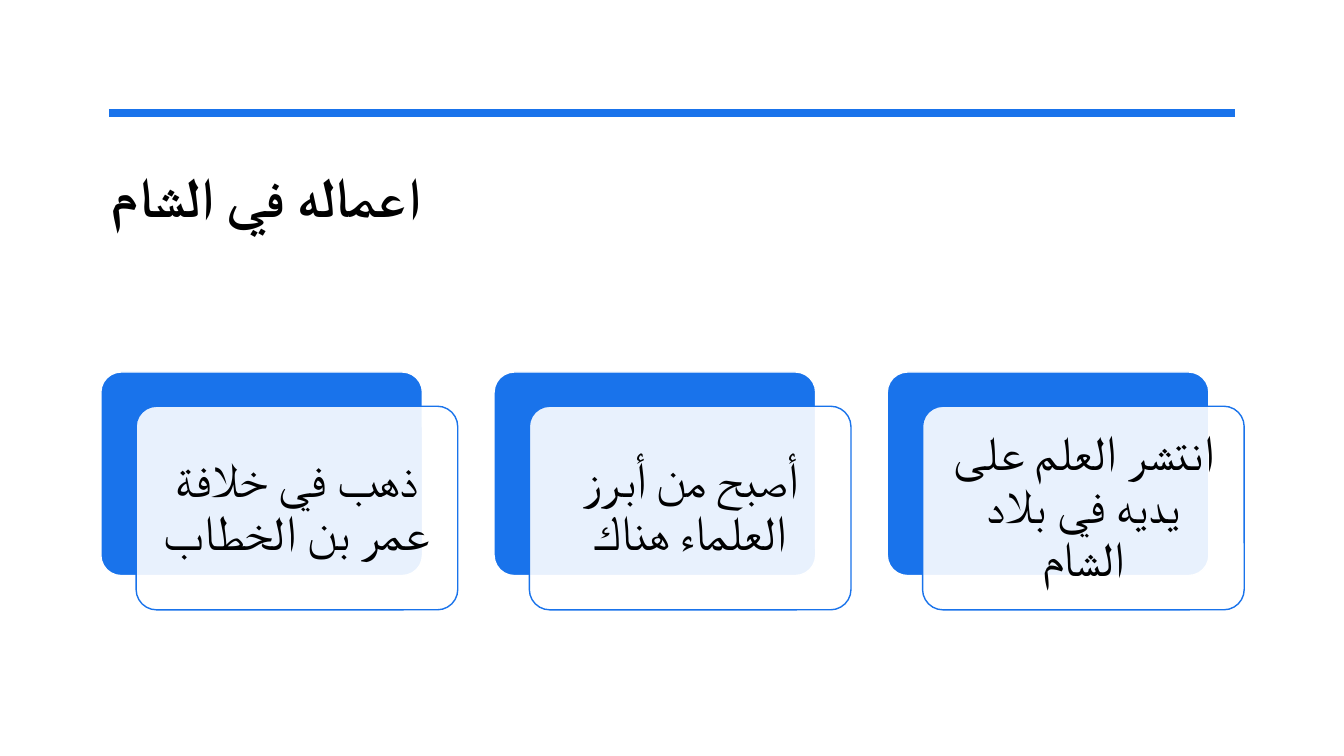
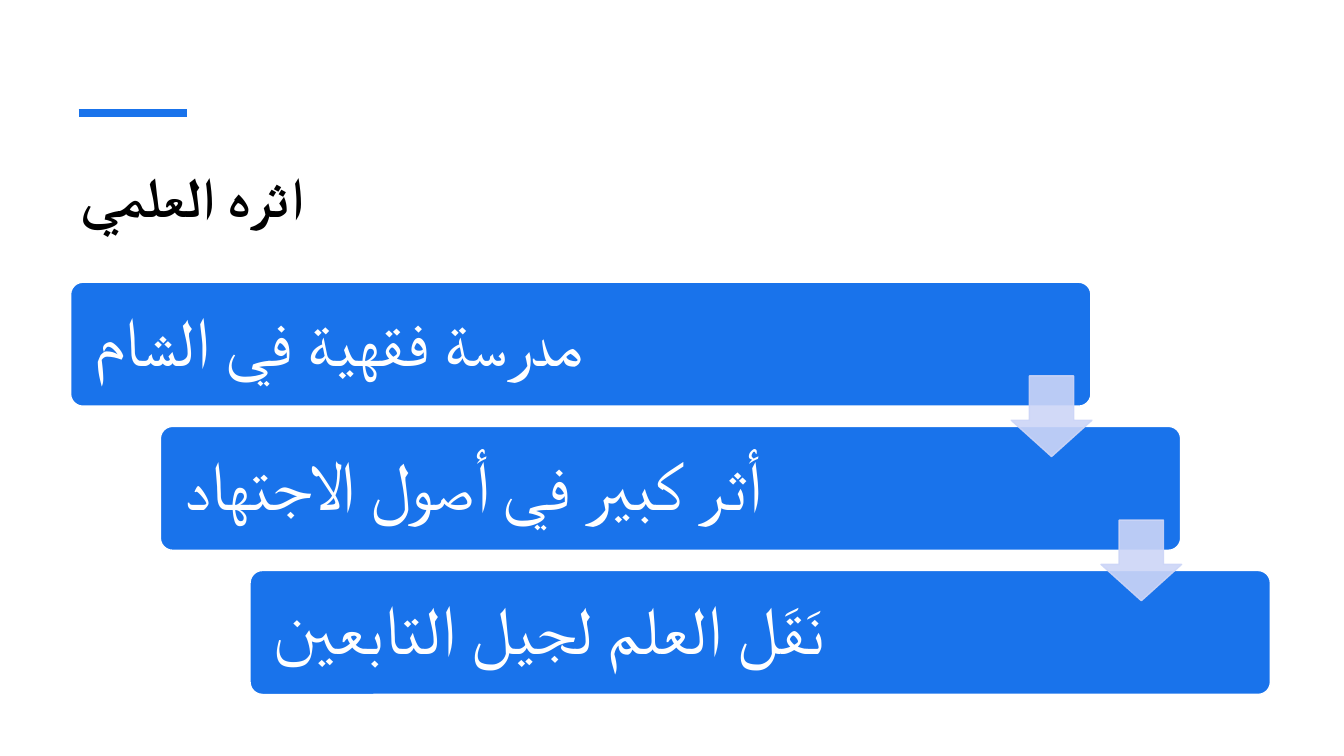
from lxml.etree import SubElement
from pptx import Presentation
from pptx.dml.color import RGBColor
from pptx.enum.shapes import MSO_CONNECTOR, MSO_SHAPE
from pptx.enum.text import MSO_ANCHOR, PP_ALIGN
from pptx.oxml.ns import qn
from pptx.util import Inches, Pt

BLUE = RGBColor(0x19, 0x73, 0xEB)
PALE_BLUE = RGBColor(0xCC, 0xD5, 0xF7)
WHITE = RGBColor(0xFF, 0xFF, 0xFF)
BLACK = RGBColor(0x00, 0x00, 0x00)
FONT = "Calibri"
TITLE_FORMAT = {"size": Pt(40), "bold": True}
CARD_FORMAT = {"size": Pt(35)}
BAR_FORMAT = {"size": Pt(49)}
CARDS = [
    "ذهب في خلافة عمر بن الخطاب",
    "أصبح من أبرز العلماء هناك",
    "انتشر العلم على يديه في بلاد الشام",
]
BARS = [
    "مدرسة فقهية في الشام",
    "أثر كبير في أصول الاجتهاد",
    "نَقَل العلم لجيل التابعين",
]


def set_opacity(color_format, percent):
    """Make a solid fill partly transparent."""
    color = color_format._xPr.find(qn("a:solidFill"))[0]
    SubElement(color, qn("a:alpha"), val=str(percent * 1000))


def write_text(shape, text, color, font_format, inset=0.1,
               alignment=PP_ALIGN.LEFT, anchor=MSO_ANCHOR.MIDDLE, spacing=0.9):
    """Write one formatted paragraph into a shape."""
    frame = shape.text_frame
    frame_format = {"word_wrap": True, "vertical_anchor": anchor}
    for side in ("left", "top", "right", "bottom"):
        frame_format[f"margin_{side}"] = Inches(inset)
    for name, value in frame_format.items():
        setattr(frame, name, value)
    paragraph = frame.paragraphs[0]
    paragraph.alignment = alignment
    paragraph.line_spacing = spacing
    run = paragraph.add_run()
    run.text = text
    run.font.color.rgb = color
    for name, value in {"name": FONT, **font_format}.items():
        setattr(run.font, name, value)
    SubElement(run.font._element, qn("a:cs"), typeface=FONT)


def add_block(slide, kind, box, fill, line, adjustments, opacity=100):
    """Add a filled preset shape with a thin outline."""
    shape = slide.shapes.add_shape(kind, *map(Inches, box))
    shape.shadow.inherit = False
    shape.fill.solid()
    shape.fill.fore_color.rgb = fill
    shape.line.color.rgb = line
    shape.line.width = Pt(1)
    for index, value in enumerate(adjustments):
        shape.adjustments[index] = value
    if opacity < 100:
        set_opacity(shape.fill, opacity)
    return shape


def add_heading(slide, title, box, rule_width):
    """Add the blue rule and the title below it."""
    left, top, width, height = box
    start, rule_top = left + 0.08, top - 0.38
    rule = slide.shapes.add_connector(
        MSO_CONNECTOR.STRAIGHT, Inches(start), Inches(rule_top),
        Inches(start + rule_width), Inches(rule_top))
    rule.line.color.rgb = BLUE
    rule.line.width = Pt(6)
    SubElement(rule._element.spPr, qn("a:effectLst"))
    text_box = slide.shapes.add_textbox(*map(Inches, (left, top, width, height)))
    write_text(text_box, title, BLACK, TITLE_FORMAT,
               anchor=MSO_ANCHOR.TOP, spacing=1.0)


def add_cards(slide, texts, left, top):
    """Place a row of blue cards, each under an offset white text card."""
    width, height, pitch = 3.19, 2.02, 3.9
    for index, text in enumerate(texts):
        x = left + index * pitch
        add_block(slide, MSO_SHAPE.ROUNDED_RECTANGLE,
                  (x, top, width, height), BLUE, WHITE, [0.1])
        front = add_block(slide, MSO_SHAPE.ROUNDED_RECTANGLE,
                          (x + 0.35, top + 0.34, width, height),
                          WHITE, BLUE, [0.1], opacity=90)
        write_text(front, text, BLACK, CARD_FORMAT, inset=0.15,
                   alignment=PP_ALIGN.CENTER)


def add_staircase(slide, texts, left, top):
    """Place bars that step right and down, joined by arrows."""
    width, height, step, pitch, arrow = 10.12, 1.23, 0.89, 1.43, 0.8
    corners = [(left + index * step, top + index * pitch)
               for index in range(len(texts))]
    for (x, y), text in zip(corners, texts):
        bar = add_block(slide, MSO_SHAPE.ROUNDED_RECTANGLE,
                        (x, y, width, height), BLUE, WHITE, [0.1])
        write_text(bar, text, WHITE, BAR_FORMAT, inset=0.2)
    for x, y in corners[:-1]:
        shape = add_block(slide, MSO_SHAPE.DOWN_ARROW,
                          (x + width - arrow + 0.01, y + 0.93, arrow, arrow),
                          PALE_BLUE, PALE_BLUE, [0.55, 0.45], opacity=90)
        set_opacity(shape.line.fill, 90)


def build_works_slide(slide):
    """Build the slide of works in the Levant."""
    add_heading(slide, "اعماله في الشام", (1, 1.5, 11.33, 1.25), 11.17)
    add_cards(slide, CARDS, 1, 3.69)


def build_influence_slide(slide):
    """Build the slide of scholarly influence."""
    add_heading(slide, "اثره العلمي", (0.7, 1.5, 11.91, 1.2), 1.07)
    add_staircase(slide, BARS, 0.7, 2.8)


def main():
    """Build and save the presentation."""
    presentation = Presentation()
    presentation.slide_width = Inches(13.33)
    presentation.slide_height = Inches(7.5)
    for build in (build_works_slide, build_influence_slide):
        build(presentation.slides.add_slide(presentation.slide_layouts[6]))
    presentation.save("out.pptx")


if __name__ == "__main__":
    main()
